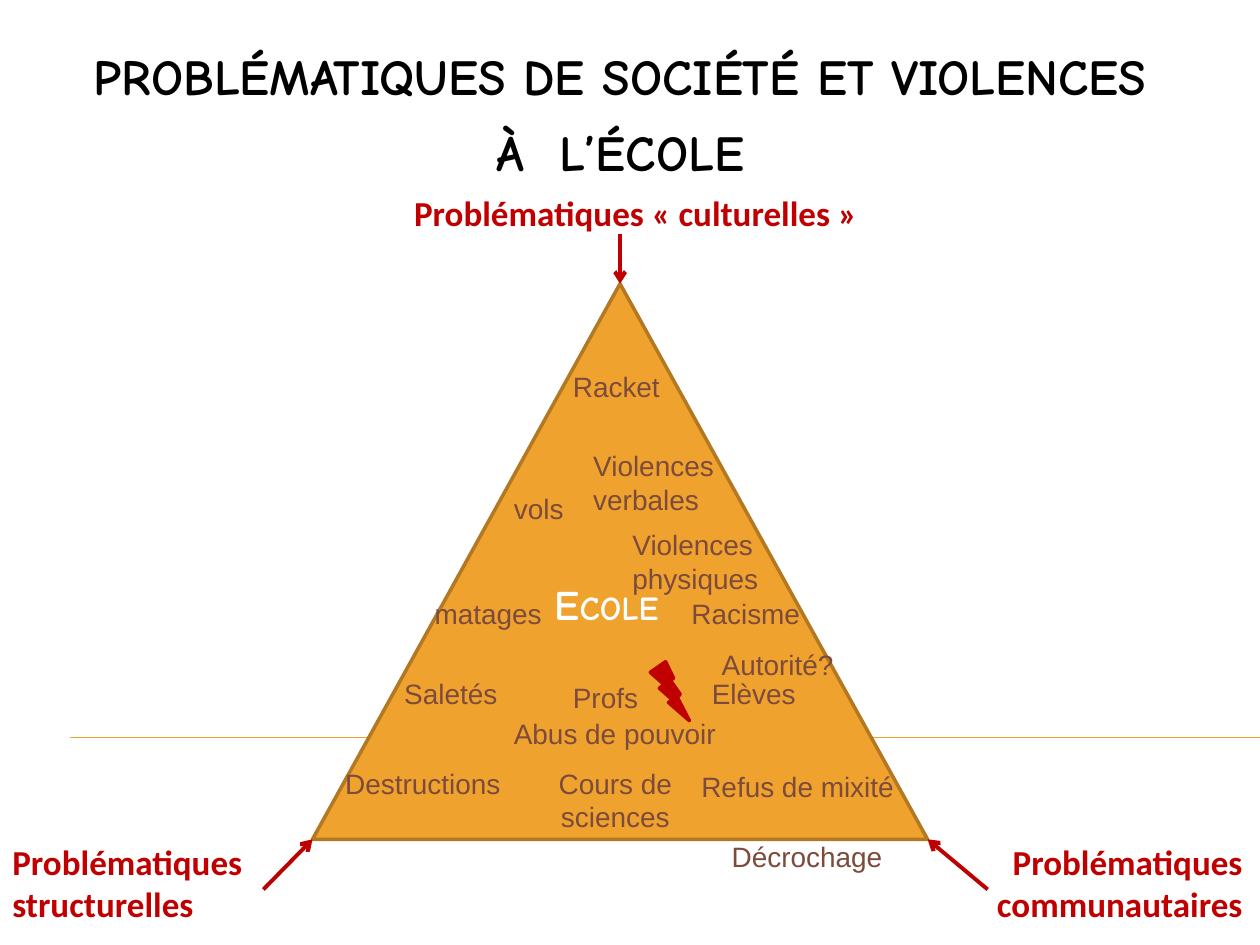
from dataclasses import dataclass

from lxml.etree import SubElement
from pptx import Presentation
from pptx.dml.color import RGBColor
from pptx.enum.shapes import MSO_CONNECTOR, MSO_SHAPE
from pptx.enum.text import MSO_ANCHOR, MSO_AUTO_SIZE, PP_ALIGN
from pptx.oxml.ns import qn
from pptx.util import Cm, Pt


@dataclass(frozen=True)
class Theme:
    orange: RGBColor = RGBColor(0xF0, 0xA2, 0x2E)
    orange_edge: RGBColor = RGBColor(0xB2, 0x78, 0x22)
    red: RGBColor = RGBColor(0xC0, 0x00, 0x00)
    brown: RGBColor = RGBColor(0x7C, 0x4B, 0x3B)
    black: RGBColor = RGBColor(0, 0, 0)
    white: RGBColor = RGBColor(0xFF, 0xFF, 0xFF)
    heading_font: str = "Comic Neue"
    label_font: str = "Calibri"
    word_font: str = "Arial"
    title_size: int = 36
    school_size: int = 24
    label_size: int = 20
    word_size: int = 16


theme = Theme()


def write_text(shape, paragraphs, font, size, color, align=PP_ALIGN.LEFT, bold=False, small_caps=False):
    frame = shape.text_frame
    frame.word_wrap = True
    frame.auto_size = MSO_AUTO_SIZE.SHAPE_TO_FIT_TEXT
    frame.vertical_anchor = MSO_ANCHOR.TOP
    for index, text in enumerate(paragraphs):
        paragraph = frame.add_paragraph() if index else frame.paragraphs[0]
        paragraph.alignment = align
        run = paragraph.add_run()
        run.text = text
        run.font.name = font
        run.font.size = Pt(size)
        run.font.bold = bold
        run.font.color.rgb = color
        if small_caps:
            run._r.get_or_add_rPr().set("cap", "small")


def add_line(slide, start, end, color, width, arrow=False):
    connector = slide.shapes.add_connector(MSO_CONNECTOR.STRAIGHT, *map(Cm, start + end))
    connector.line.color.rgb = color
    connector.line.width = Pt(width)
    if arrow:
        SubElement(connector.line._get_or_add_ln(), qn("a:tailEnd"), type="arrow")
    SubElement(connector._element.spPr, qn("a:effectLst"))
    return connector


presentation = Presentation()
presentation.slide_width = Cm(25.4)
presentation.slide_height = Cm(19.05)
slide = presentation.slides.add_slide(presentation.slide_layouts[5])

# Title
title = slide.shapes.title
title.left, title.top, title.width, title.height = Cm(1.5), Cm(0.53), Cm(22), Cm(3.33)
write_text(title, ["problématiques de société et violences à  l’école"], theme.heading_font,
           theme.title_size, theme.black, PP_ALIGN.CENTER, bold=True, small_caps=True)

# Rule behind the triangle
add_line(slide, (1.42, 14.86), (25.4, 14.86), theme.orange, 0.75)

# Triangle with the school in its middle
left, top, width, height = 6.3, 5.72, 12.4, 11.2
apex = (left + width / 2, top)
bottom_left = (left, top + height)
bottom_right = (left + width, top + height)
group = slide.shapes.add_group_shape()
triangle = group.shapes.add_shape(MSO_SHAPE.ISOSCELES_TRIANGLE, *map(Cm, (left, top, width, height)))
school = group.shapes.add_textbox(Cm(10.11), Cm(11.53), Cm(4.24), Cm(1.27))
write_text(school, ["Ecole"], theme.heading_font, theme.school_size, theme.white,
           PP_ALIGN.CENTER, bold=True, small_caps=True)

# Problem areas at the three corners
corner_labels = [
    ("Problématiques «\u00a0culturelles\u00a0»", 6.91, 3.73, 11.81, 1.12, PP_ALIGN.CENTER),
    ("Problématiques communautaires", 17.91, 16.81, 7.39, 1.96, PP_ALIGN.RIGHT),
    ("Problématiques structurelles", 0, 16.81, 7.59, 1.96, PP_ALIGN.LEFT),
]
for text, *box, align in corner_labels:
    label = slide.shapes.add_textbox(*map(Cm, box))
    write_text(label, [text], theme.label_font, theme.label_size, theme.red, align, bold=True)

# Arrows to the corners
top_arrow = add_line(slide, (apex[0], 4.72), apex, theme.red, 2.25, arrow=True)
top_arrow.end_connect(triangle, 0)
add_line(slide, (19.91, 17.93), bottom_right, theme.red, 2.25, arrow=True)
add_line(slide, (5.31, 17.93), bottom_left, theme.red, 2.25, arrow=True)

# Lightning bolt between teachers and pupils
bolt = slide.shapes.add_shape(MSO_SHAPE.LIGHTNING_BOLT, Cm(13.11), Cm(13.34), Cm(0.79), Cm(1.19))
for shape, fill, edge in ((triangle, theme.orange, theme.orange_edge), (bolt, theme.red, theme.red)):
    shape.shadow.inherit = False
    shape.fill.solid()
    shape.fill.fore_color.rgb = fill
    shape.line.color.rgb = edge
    shape.line.width = Pt(2)

# Words inside the triangle: paragraphs, left, top, width, number of lines
one_line, two_lines = 0.94, 1.63
words = [
    (["Décrochage"], 14.5, 16.79, 3.81, one_line),
    (["Elèves"], 14.1, 13.51, 2.57, one_line),
    (["Profs"], 11.3, 13.59, 2.01, one_line),
    (["Racisme"], 13.69, 11.91, 3.1, one_line),
    (["Abus de pouvoir"], 10.11, 14.33, 4.8, one_line),
    (["matages"], 8.51, 11.91, 2.97, one_line),
    (["Racket"], 11.3, 7.32, 2.79, one_line),
    (["vols"], 10.11, 9.78, 1.8, one_line),
    (["Violences", "verbales"], 11.71, 8.92, 3.81, two_lines),
    (["Saletés"], 7.9, 13.51, 2.39, one_line),
    (["Cours de sciences"], 10.31, 15.32, 4.19, two_lines),
    (["Refus de mixité"], 13.89, 15.39, 4.5, one_line),
    (["Autorité?"], 14.3, 12.93, 3.1, one_line),
    (["Destructions"], 6.71, 15.32, 3.91, one_line),
    (["Violences physiques"], 12.5, 10.52, 3.81, two_lines),
]
for paragraphs, *box in words:
    align = PP_ALIGN.CENTER if paragraphs == ["Cours de sciences"] else PP_ALIGN.LEFT
    word = slide.shapes.add_textbox(*map(Cm, box))
    write_text(word, paragraphs, theme.word_font, theme.word_size, theme.brown, align)

presentation.save("out.pptx")
